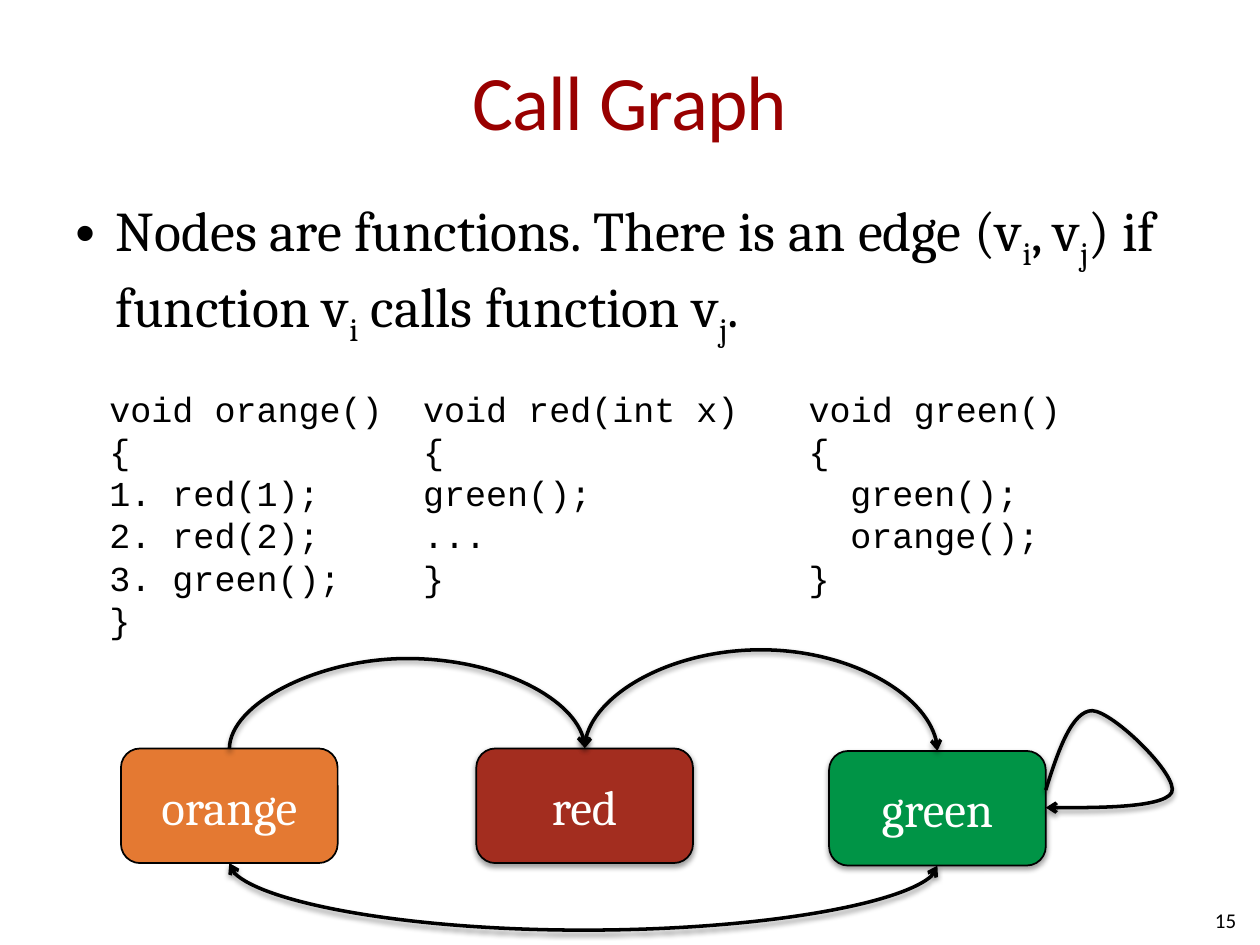
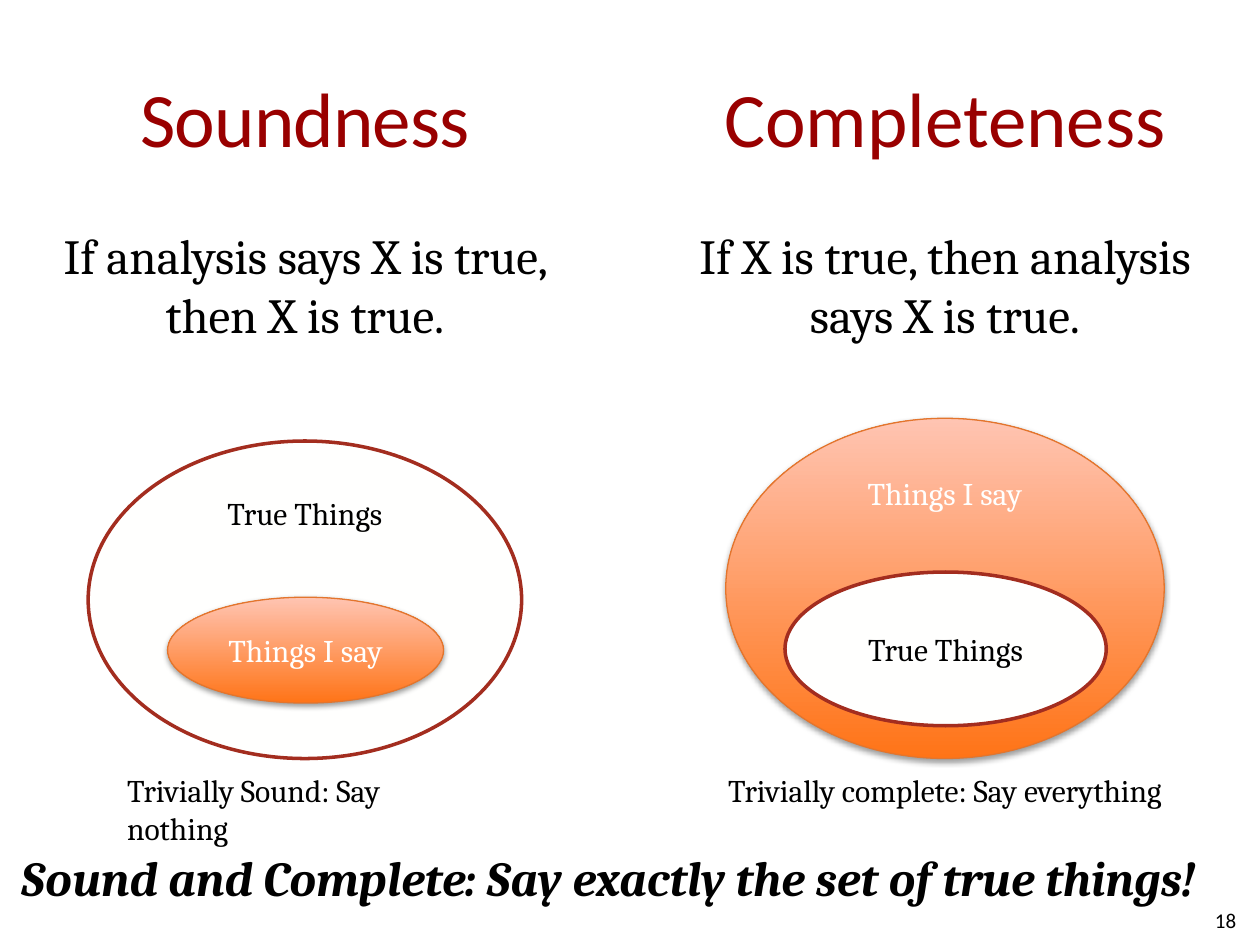
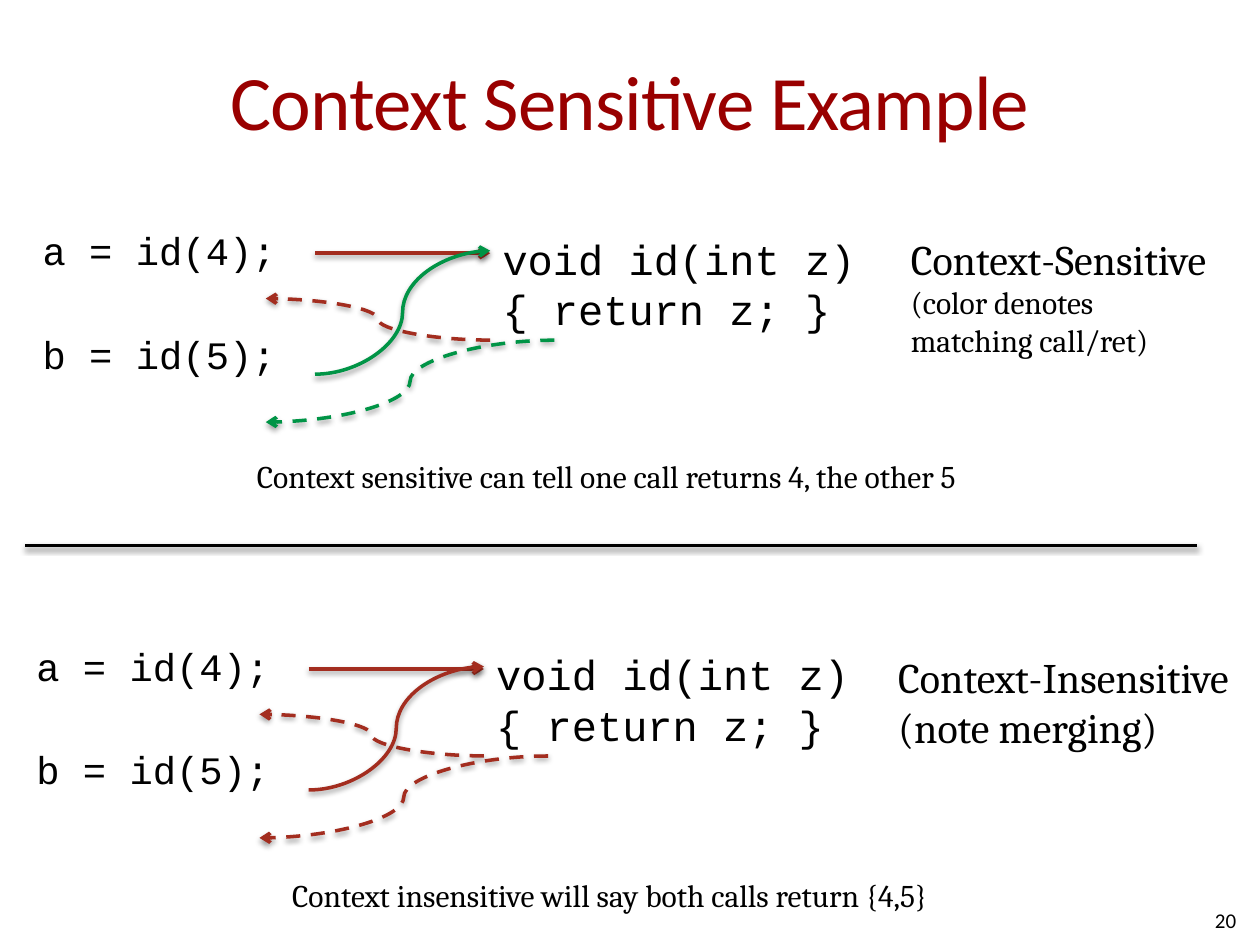
from lxml.etree import SubElement
from pptx import Presentation
from pptx.dml.color import RGBColor
from pptx.enum.dml import MSO_LINE
from pptx.enum.shapes import MSO_CONNECTOR, MSO_SHAPE
from pptx.enum.text import MSO_ANCHOR, MSO_AUTO_SIZE, PP_ALIGN
from pptx.oxml.ns import qn
from pptx.util import Inches, Pt

BLACK, WHITE, TITLE_RED = "000000", "FFFFFE", "990000"
ORANGE, RED, GREEN = "E47932", "A32D1F", "009446"
GLOW = ("FF7417", "FFC4B2", "E3752D")
SERIF, SANS, MONO = "Cambria", "Calibri", "Courier New"
LEFT, CENTER, RIGHT = PP_ALIGN.LEFT, PP_ALIGN.CENTER, PP_ALIGN.RIGHT
TOP, MIDDLE = MSO_ANCHOR.TOP, MSO_ANCHOR.MIDDLE
WIDE_TITLE = (0.5, 0.17, 9, 1.25)
TOP_SITE, BOTTOM_SITE = 0, 2

DEFINITION = [
    ("Nodes are functions. There is an edge (v", False), ("i", True),
    (", v", False), ("j", True), (") if function v", False), ("i", True),
    (" calls function v", False), ("j", True), (".", False),
]
LISTINGS = [
    (0.77, ["void orange()", "{", "1. red(1);", "2. red(2);", "3. green();", "}"], []),
    (3.26, ["void red(int x)", "{", "green();", "...", "}"], []),
    (6.32, ["void green()", "{", "green();", "orange();", "}"], [2, 3]),
]
NODES = [
    ("orange", 0.96, 5.94, ORANGE, False),
    ("red", 3.78, 5.94, RED, True),
    ("green", 6.58, 5.96, GREEN, True),
]
CALLS = [
    ("orange", "red", TOP_SITE, 5.21, False),
    ("red", "green", TOP_SITE, 5.16, True),
    ("green", "orange", BOTTOM_SITE, 7.38, True),
]
SELF_CALL = [
    (8.3, 6.27), (8.4, 5.95), (8.51, 5.64), (8.67, 5.64), (8.84, 5.65),
    (9.36, 6.16), (9.3, 6.29), (9.23, 6.42), (8.3, 6.41), (8.3, 6.41),
]

CLAIMS = [
    (0.3, "If analysis says X is true, then X is true."),
    (5.38, "If X is true, then analysis says X is true."),
]
SETS = [
    ("True Things", (0.7, 3.5, 3.44, 2.52), TOP),
    ("Things I say", (1.33, 4.74, 2.19, 0.84), MIDDLE),
    ("Things I say", (5.76, 3.32, 3.48, 2.7), TOP),
    ("True Things", (6.23, 4.54, 2.55, 1.22), MIDDLE),
]
TRIVIAL_CASES = [
    (0.91, 3.02, "Trivially Sound: Say nothing"),
    (5.68, 3.65, "Trivially complete: Say everything"),
]
CONCLUSION = "Sound and Complete: Say exactly the set of true things!"

CALL_SITES = ["a = id(4);", "b = id(5);"]
CALLEE = ["void id(int z)", "{ return z; }"]
FLOWS = [
    ((2.5, 2.01), (3.89, 2.01), False),
    ((3.89, 2.7), (2.11, 2.37), True),
    ((2.5, 2.97), (3.89, 1.99), False),
    ((4.4, 2.7), (2.11, 3.35), True),
]
ANALYSES = [
    {
        "shift": (0, 0), "colors": [RED, RED, GREEN, GREEN],
        "label": [("Context-Sensitive", 24), ("(color denotes", 18), ("matching call/ret)", 18)],
        "label_at": (7.13, 1.8, 2.72, 1.11),
        "result": "Context sensitive can tell one call returns 4, the other 5",
        "result_at": (1.94, 3.58, 6.11, 0.4),
    },
    {
        "shift": (-0.05, 3.3), "colors": [RED] * 4,
        "label": [("Context-Insensitive", 24), ("(note merging)", 24)],
        "label_at": (7.03, 5.12, 2.9, 0.91),
        "result": "Context insensitive will say both calls return {4,5}",
        "result_at": (2.22, 6.9, 5.56, 0.4),
    },
]


def color(value):
    return RGBColor.from_string(value)


def lengths(values):
    return [Inches(value) for value in values]


def add_span(para, text, size, font=SERIF, ink=BLACK):
    span = para.add_run()
    span.text = text
    span.font.size = Pt(size)
    span.font.name = font
    span.font.color.rgb = color(ink)
    return span


def fill_text(shape, lines, size, font=SERIF, ink=BLACK, align=LEFT, anchor=TOP):
    frame = shape.text_frame
    frame.word_wrap = True
    frame.auto_size = MSO_AUTO_SIZE.NONE
    frame.vertical_anchor = anchor
    for index, line in enumerate(lines):
        para = frame.add_paragraph() if index else frame.paragraphs[0]
        para.alignment = align
        add_span(para, line, size, font, ink)
    return frame


def add_text(page, at, lines, size, **style):
    return fill_text(page.shapes.add_textbox(*lengths(at)), lines, size, **style)


def style_title(shape, text):
    return fill_text(shape, [text], 44, font=SANS, ink=TITLE_RED, align=CENTER, anchor=MIDDLE)


def add_page(deck, title, number, title_at=WIDE_TITLE):
    page = deck.slides.add_slide(deck.slide_layouts[5])
    heading = page.shapes.title
    heading.left, heading.top, heading.width, heading.height = lengths(title_at)
    frame = style_title(heading, title)
    frame.margin_left = frame.margin_right = 0
    frame.paragraphs[0].runs[0].font._element.set("spc", "-50")
    add_text(page, (7.58, 7.1, 2.33, 0.4), [str(number)], 12, font=SANS, align=RIGHT, anchor=MIDDLE)
    return page


def set_indent(para, left, first=0):
    properties = para._p.get_or_add_pPr()
    properties.set("marL", str(Inches(left)))
    properties.set("indent", str(Inches(first)))
    return properties


def set_shadow(shape, cast=True):
    properties = shape._element.spPr
    effects = properties.find(qn("a:effectLst"))
    if effects is None:
        effects = SubElement(properties, qn("a:effectLst"))
    if cast:
        shadow = SubElement(effects, qn("a:outerShdw"), blurRad="40000", dist="20000",
                            dir="5400000", rotWithShape="0")
        ink = SubElement(shadow, qn("a:srgbClr"), val=BLACK)
        SubElement(ink, qn("a:alpha"), val="38000")


def style_line(shape, ink=BLACK, ends=(), dashed=False):
    shape.line.color.rgb = color(ink)
    shape.line.width = Pt(2)
    if dashed:
        shape.line.dash_style = MSO_LINE.DASH
    for end in ends:
        SubElement(shape.line._get_or_add_ln(), qn(f"a:{end}"), type="arrow")
    set_shadow(shape)


def add_shape(page, kind, at, text, fill, line, width, ink, anchor=MIDDLE, cast=False):
    shape = page.shapes.add_shape(kind, *lengths(at))
    shape.shadow.inherit = False
    if isinstance(fill, str):
        shape.fill.solid()
        shape.fill.fore_color.rgb = color(fill)
    else:
        shape.fill.gradient()
        shape.fill.gradient_angle = 90
        for stop, value in zip(shape.fill.gradient_stops, fill):
            stop.color.rgb = color(value)
    shape.line.color.rgb = color(line)
    shape.line.width = Pt(width)
    set_shadow(shape, cast)
    fill_text(shape, [text], 28 if kind == MSO_SHAPE.ROUNDED_RECTANGLE else 18,
              ink=ink, align=CENTER, anchor=anchor)
    return shape


def add_line(page, kind, start, end, **style):
    line = page.shapes.add_connector(kind, *lengths(start + end))
    style_line(line, **style)
    return line


def add_call_arc(page, caller, callee, site, apex, both_ways):
    arc = page.shapes.add_connector(MSO_CONNECTOR.CURVE, 0, 0, 0, 0)
    arc.begin_connect(caller, site)
    arc.end_connect(callee, site)
    x1, y1, x2, y2 = arc.begin_x, arc.begin_y, arc.end_x, arc.end_y
    drop = (y2 - y1) or -Inches(0.01)
    arc.width, arc.height = abs(drop), abs(x2 - x1)
    arc.left = (x1 + x2 - arc.width) // 2
    arc.top = (y1 + y2 - arc.height) // 2
    frame = arc._element.spPr.find(qn("a:xfrm"))
    frame.set("rot", "5400000")
    frame.set("flipH", str(int(drop < 0)))
    frame.set("flipV", str(int(x2 > x1)))
    bend = round((Inches(apex) - y1) / drop * 100000)
    geometry = arc._element.spPr.find(qn("a:prstGeom"))
    for guides in geometry.findall(qn("a:avLst")):
        geometry.remove(guides)
    SubElement(SubElement(geometry, qn("a:avLst")), qn("a:gd"), name="adj1", fmla=f"val {bend}")
    style_line(arc, ends=("headEnd", "tailEnd") if both_ways else ("tailEnd",))


def add_self_call(page):
    points = [tuple(lengths(point)) for point in SELF_CALL]
    builder = page.shapes.build_freeform(*points[0])
    builder.add_line_segments(points[1:], close=False)
    loop = builder.convert_to_shape()
    outline = next(loop._element.iter(qn("a:path")))
    segments = outline.findall(qn("a:lnTo"))
    for first in range(0, len(segments), 3):
        curve = SubElement(outline, qn("a:cubicBezTo"))
        for segment in segments[first:first + 3]:
            curve.append(segment[0])
            outline.remove(segment)
    loop.fill.background()
    style_line(loop, ends=("tailEnd",))


def build_call_graph(deck):
    page = add_page(deck, "Call Graph", 15)
    frame = add_text(page, (0.5, 1.5, 9, 1.4), [], 32)
    para = frame.paragraphs[0]
    bullet = set_indent(para, 0.32, -0.32)
    SubElement(bullet, qn("a:buFont"), typeface="Arial")
    SubElement(bullet, qn("a:buChar"), char="•")
    for text, lowered in DEFINITION:
        span = add_span(para, text, 32)
        if lowered:
            span.font._element.set("baseline", "-25000")
    for left, lines, indented in LISTINGS:
        height = 0.1 + 0.34 * len(lines)
        frame = add_text(page, (left, 3.03, 3.52, height), lines, 20, font=MONO)
        for index in indented:
            set_indent(frame.paragraphs[index], 0.33)
    nodes = {}
    for name, left, top, fill, cast in NODES:
        nodes[name] = add_shape(page, MSO_SHAPE.ROUNDED_RECTANGLE, (left, top, 1.72, 0.91),
                                name, fill, BLACK, 1, WHITE, cast=cast)
    for caller, callee, site, apex, both_ways in CALLS:
        add_call_arc(page, nodes[caller], nodes[callee], site, apex, both_ways)
    add_self_call(page)


def build_soundness(deck):
    page = add_page(deck, "Soundness", 18, (0, 0.3, 4.84, 1.25))
    style_title(page.shapes.add_textbox(*lengths((5.08, 0.3, 4.84, 1.25))), "Completeness")
    for left, claim in CLAIMS:
        add_text(page, (left, 1.74, 4.24, 1.3), [claim], 28, align=CENTER)
    for text, at, anchor in SETS:
        if text == "True Things":
            look = (WHITE, RED, 2, BLACK, anchor)
        else:
            look = (GLOW[:2], GLOW[2], 0.75, WHITE, anchor, True)
        add_shape(page, MSO_SHAPE.OVAL, at, text, *look)
    for left, width, text in TRIVIAL_CASES:
        add_text(page, (left, 6.07, width, 0.4), [text], 18)
    frame = add_text(page, (0.07, 6.68, 9.87, 0.57), [CONCLUSION], 28)
    font = frame.paragraphs[0].runs[0].font
    font.bold = font.italic = True


def build_context_example(deck):
    page = add_page(deck, "Context Sensitive Example", 20)
    for analysis in ANALYSES:
        dx, dy = analysis["shift"]
        frame = add_text(page, (0.24 + dx, 1.75 + dy, 2.52, 1.22), CALL_SITES, 22.2, font=MONO)
        frame.paragraphs[1].space_before = Pt(32.5)
        add_text(page, (3.89 + dx, 1.8 + dy, 3.03, 0.91), CALLEE, 24, font=MONO)
        for (start, end, dashed), ink in zip(FLOWS, analysis["colors"]):
            add_line(page, MSO_CONNECTOR.CURVE, (start[0] + dx, start[1] + dy),
                     (end[0] + dx, end[1] + dy), ink=ink, ends=("tailEnd",), dashed=dashed)
        label = add_text(page, analysis["label_at"], [], 24)
        for index, (text, size) in enumerate(analysis["label"]):
            para = label.add_paragraph() if index else label.paragraphs[0]
            add_span(para, text, size)
        add_text(page, analysis["result_at"], [analysis["result"]], 18)
    add_line(page, MSO_CONNECTOR.STRAIGHT, (0.2, 4.33), (9.5, 4.33))


def main():
    deck = Presentation()
    deck.slide_width, deck.slide_height = Inches(10), Inches(7.5)
    build_call_graph(deck)
    build_soundness(deck)
    build_context_example(deck)
    deck.save("out.pptx")


if __name__ == "__main__":
    main()
